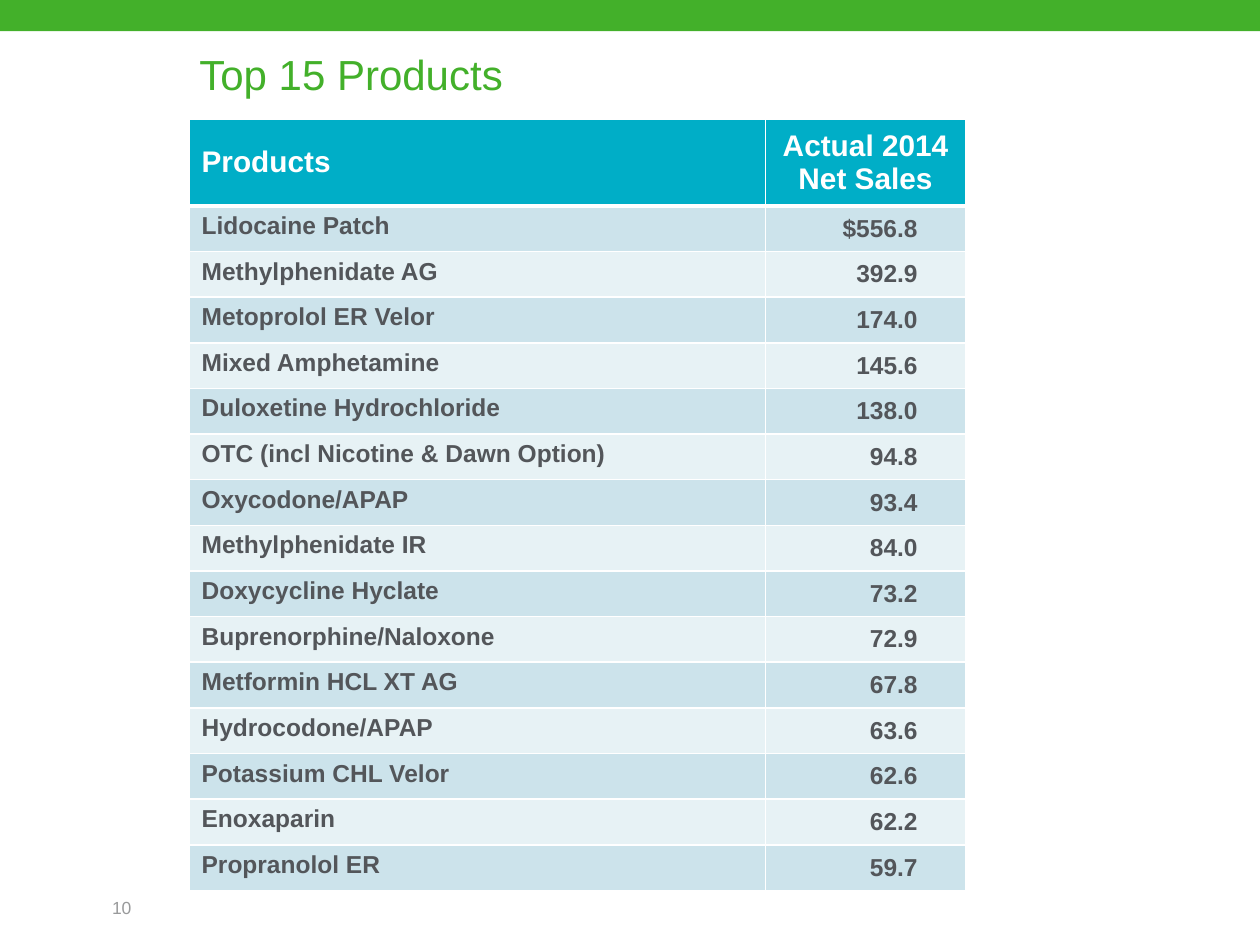
from lxml import etree
from pptx import Presentation
from pptx.dml.color import RGBColor
from pptx.enum.shapes import MSO_SHAPE
from pptx.enum.text import MSO_ANCHOR, PP_ALIGN
from pptx.oxml.ns import qn
from pptx.util import Cm, Pt

RECT = MSO_SHAPE.RECTANGLE
TOP, MIDDLE, BOTTOM = MSO_ANCHOR.TOP, MSO_ANCHOR.MIDDLE, MSO_ANCHOR.BOTTOM
LEFT, CENTER, RIGHT = PP_ALIGN.LEFT, PP_ALIGN.CENTER, PP_ALIGN.RIGHT

GREEN = RGBColor(0x43, 0xB0, 0x2A)
TEAL = RGBColor(0x00, 0xAE, 0xC7)
WHITE = RGBColor(0xFF, 0xFF, 0xFF)
DARK = RGBColor(0x53, 0x56, 0x5A)
GRAY = RGBColor(0x99, 0x9A, 0x9B)
BANDS = (RGBColor(0xCC, 0xE3, 0xEB), RGBColor(0xE7, 0xF2, 0xF5))

TITLE = "Top 15 Products"
PAGE = "10"
HEAD = ("Products", "Actual 2014\nNet Sales")
SALES = [
    ("Lidocaine Patch", "$556.8"),
    ("Methylphenidate AG", "392.9"),
    ("Metoprolol ER Velor", "174.0"),
    ("Mixed Amphetamine", "145.6"),
    ("Duloxetine Hydrochloride", "138.0"),
    ("OTC (incl Nicotine & Dawn Option)", "94.8"),
    ("Oxycodone/APAP", "93.4"),
    ("Methylphenidate IR", "84.0"),
    ("Doxycycline Hyclate", "73.2"),
    ("Buprenorphine/Naloxone", "72.9"),
    ("Metformin HCL XT AG", "67.8"),
    ("Hydrocodone/APAP", "63.6"),
    ("Potassium CHL Velor", "62.6"),
    ("Enoxaparin", "62.2"),
    ("Propranolol ER", "59.7"),
]
WIDTHS = (Cm(11.62), Cm(4.04))
HEAD_H, ROW_H = Cm(1.75), Cm(0.92)


def style(frame, size, color, bold=False, align=LEFT):
    for para in frame.paragraphs:
        para.alignment = align
        font = para.font
        font.name, font.size, font.bold = "Arial", Pt(size), bold
        font.color.rgb = color


def add_text(slide, text, box, size, color, anchor):
    frame = slide.shapes.add_textbox(*map(Cm, box)).text_frame
    frame.word_wrap = True
    frame.margin_left = frame.margin_right = 0
    frame.vertical_anchor = anchor
    frame.text = text
    style(frame, size, color)


def add_edges(cell, top, bottom):
    """Draw white cell borders; call before the cell gets its fill."""
    props = cell._tc.get_or_add_tcPr()
    for side, width in (("L", 1), ("R", 1), ("T", top), ("B", bottom)):
        line = etree.SubElement(props, qn("a:ln" + side), w=str(Pt(width)))
        fill = etree.SubElement(line, qn("a:solidFill"))
        etree.SubElement(fill, qn("a:srgbClr"), val=str(WHITE))


def add_sales(slide):
    rows = [HEAD] + SALES
    height = HEAD_H + ROW_H * len(SALES)
    table = slide.shapes.add_table(
        len(rows), len(HEAD), Cm(3.81), Cm(2.4), sum(WIDTHS), height).table
    table.horz_banding = False
    for col, width in zip(table.columns, WIDTHS):
        col.width = width
    for r, row in enumerate(rows):
        head = r == 0
        table.rows[r].height = HEAD_H if head else ROW_H
        for c, text in enumerate(row):
            cell = table.cell(r, c)
            add_edges(cell, 3 if r == 1 else 1, 3 if head else 1)
            cell.fill.solid()
            cell.fill.fore_color.rgb = TEAL if head else BANDS[(r - 1) % 2]
            cell.vertical_anchor = MIDDLE if head or c else TOP
            cell.text = text
            if head:
                style(cell.text_frame, 17, WHITE, True, CENTER if c else LEFT)
            else:
                style(cell.text_frame, 14, DARK, True, RIGHT if c else LEFT)
                if c:
                    cell.margin_right = Cm(0.97)


def main():
    deck = Presentation()
    deck.slide_width, deck.slide_height = Cm(25.4), Cm(19.05)
    slide = deck.slides.add_slide(deck.slide_layouts[6])

    bar = slide.shapes.add_shape(RECT, 0, 0, deck.slide_width, Cm(0.63))
    bar.shadow.inherit = False
    bar.fill.solid()
    bar.fill.fore_color.rgb = GREEN
    bar.line.fill.background()

    add_text(slide, TITLE, (4.02, 0.63, 19.33, 1.48), 24, GREEN, BOTTOM)
    add_sales(slide)
    add_text(slide, PAGE, (2.26, 17.78, 1.68, 1.02), 10, GRAY, MIDDLE)
    deck.save("out.pptx")


if __name__ == "__main__":
    main()
